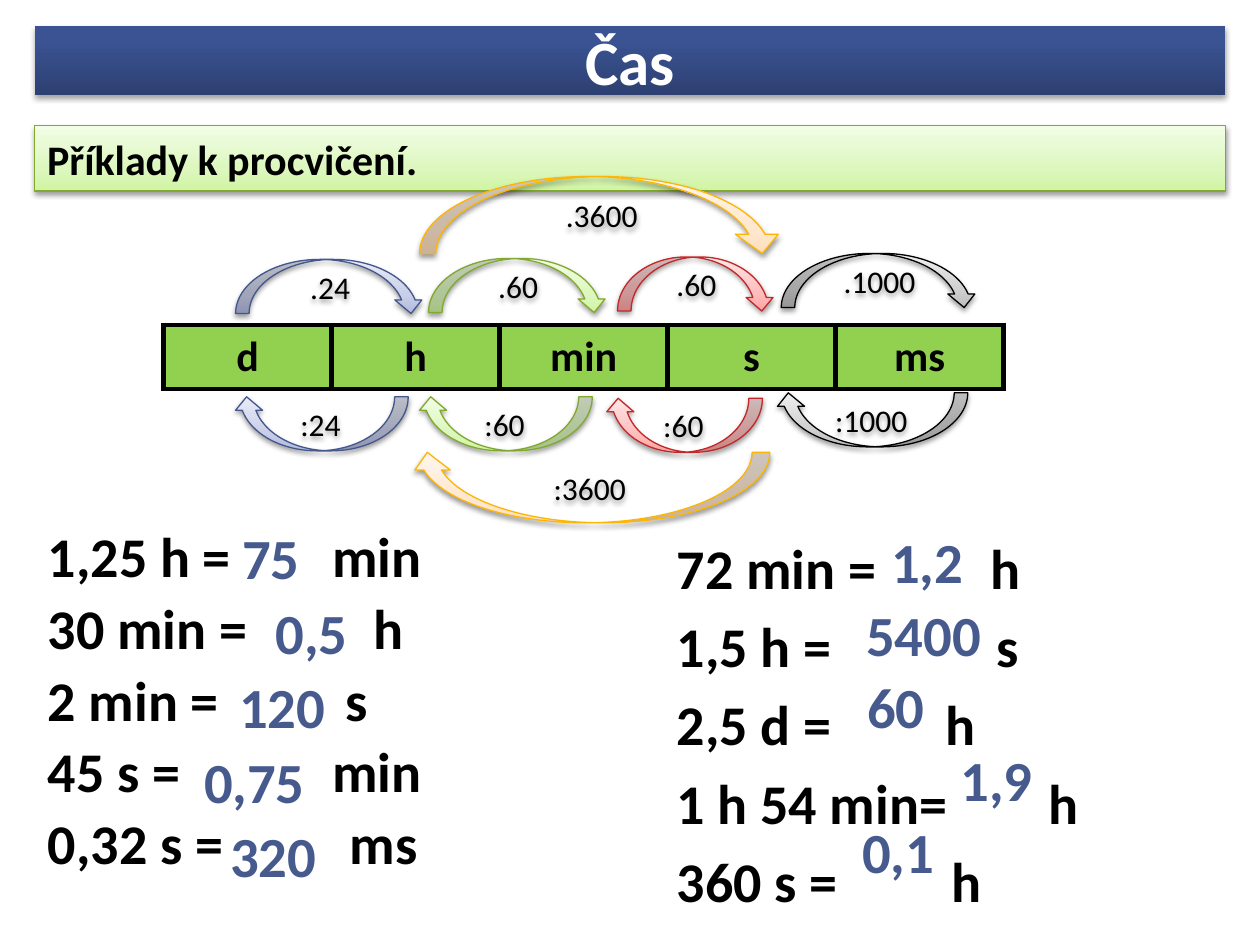
from copy import deepcopy
from lxml.etree import SubElement
from pptx import Presentation
from pptx.dml.color import RGBColor
from pptx.enum.shapes import MSO_SHAPE
from pptx.enum.text import MSO_ANCHOR, MSO_AUTO_SIZE, PP_ALIGN
from pptx.oxml.ns import qn
from pptx.util import Cm, Pt

FONT = "Calibri"
SPACE_WIDTH = 7.23
BLACK = RGBColor(0x00, 0x00, 0x00)
WHITE = RGBColor(0xFF, 0xFF, 0xFF)
ANSWER = RGBColor(0x47, 0x5A, 0x8D)
CELL = RGBColor(0x92, 0xD0, 0x50)
BLUE_LINE = RGBColor(0x44, 0x57, 0x8C)
GREEN_LINE = RGBColor(0x82, 0xA9, 0x2F)
RED_LINE = RGBColor(0xC2, 0x28, 0x29)
ORANGE_LINE = RGBColor(0xFE, 0xB6, 0x04)
NAVY = (RGBColor(0x2D, 0x40, 0x71), RGBColor(0x3B, 0x53, 0x93), RGBColor(0x39, 0x52, 0x95))
BLUE = (RGBColor(0xB2, 0xBB, 0xE0), RGBColor(0xC9, 0xCF, 0xE8), RGBColor(0xEA, 0xEC, 0xF7))
GREEN = (RGBColor(0xD0, 0xF5, 0xA3), RGBColor(0xDD, 0xF7, 0xBF), RGBColor(0xF2, 0xFD, 0xE6))
RED = (RGBColor(0xFF, 0xA3, 0xA3), RGBColor(0xFF, 0xBE, 0xBE), RGBColor(0xFF, 0xE6, 0xE6))
GRAY = (RGBColor(0xBD, 0xBD, 0xBD), RGBColor(0xD1, 0xD1, 0xD1), RGBColor(0xEE, 0xEE, 0xEE))
ORANGE = (RGBColor(0xFF, 0xDF, 0xBC), RGBColor(0xFF, 0xE8, 0xD0), RGBColor(0xFF, 0xF6, 0xED))

UNITS = ("d", "h", "min", "s", "ms")
LEFT_TASKS = (("1,25 h =", 8, "min"), ("30 min =", 10, "h"), ("2 min =", 10, "s"),
              ("45 s =", 12, "min"), ("0,32 s =", 10, "ms"))
RIGHT_TASKS = (("72 min =", 9, "h"), ("1,5 h =", 13, "s"), ("2,5 d =", 9, "h"),
               ("1 h 54 min=", 8, "h"), ("360 s =", 9, "h"))
LEFT_ANSWERS = (("75", 3.4), ("0,5", 4.22), ("120", 3.63), ("0,75", 3.07), ("320", 3.45))
RIGHT_ANSWERS = (("1,2", 16.63), ("5400", 16.56), ("60", 16), ("1,9", 18.03), ("0,1", 16.05))
MULTIPLY = (
    (".24", (4.75, 5.23, 3.81, 1.09), BLUE, BLUE_LINE),
    (".60", (8.64, 5.21, 3.61, 1.09), GREEN, GREEN_LINE),
    (".60", (12.45, 5.18, 3.18, 1.09), RED, RED_LINE),
    (".1000", (15.75, 5.11, 3.96, 1.09), GRAY, BLACK),
    (".3600", (8.46, 3.56, 7.34, 1.55), ORANGE, ORANGE_LINE),
)
DIVIDE = (
    (":24", (4.7, 8, 3.53, 1.09), BLUE, BLUE_LINE),
    (":60", (8.41, 8, 3.53, 1.09), GREEN, GREEN_LINE),
    (":60", (12.19, 8.03, 3.18, 1.09), RED, RED_LINE),
    (":1000", (15.62, 7.92, 3.89, 1.09), GRAY, BLACK),
    (":3600", (8.26, 9.12, 7.26, 1.42), ORANGE, ORANGE_LINE),
)


def write(paragraph, text, *, size, color=BLACK, bold=True, align=PP_ALIGN.LEFT,
          spacing=None, before=None, tracking=None):
    """Add formatted text to a paragraph."""
    paragraph.alignment = align
    if spacing:
        paragraph.line_spacing = spacing
    if before is not None:
        paragraph.space_before = before
    run = paragraph.add_run()
    run.text = text
    run.font.name = FONT
    run.font.size = Pt(size)
    run.font.bold = bold
    run.font.color.rgb = color
    if tracking:
        run._r.get_or_add_rPr().set("spc", str(round(tracking * 100)))


def place(shape, left, top, width, height):
    """Move and size a shape, in centimetres."""
    shape.left, shape.top = Cm(left), Cm(top)
    shape.width, shape.height = Cm(width), Cm(height)


def shade(shape, colors, middle=0.35, line=None, distance=1.6, opacity=38):
    """Give a shape an upward gradient, an outline and a soft shadow."""
    shape.fill.gradient()
    last_stop = shape._element.spPr.findall(".//" + qn("a:gs"))[-1]
    last_stop.addnext(deepcopy(last_stop))
    shape.fill.gradient_angle = 90
    for stop, color, position in zip(shape.fill.gradient_stops, colors, (0, middle, 1)):
        stop.color.rgb = color
        stop.position = position
    if line is None:
        shape.line.fill.background()
    else:
        shape.line.color.rgb = line
        shape.line.width = Pt(0.75)
    shape.shadow.inherit = False
    effects = shape._element.spPr.find(qn("a:effectLst"))
    shadow = SubElement(effects, qn("a:outerShdw"), blurRad=str(Pt(3.1)),
                        dist=str(Pt(distance)), dir="5400000", rotWithShape="0")
    tint = SubElement(shadow, qn("a:srgbClr"), val=str(BLACK))
    SubElement(tint, qn("a:alpha"), val=str(opacity * 1000))


def add_heading(slide):
    """Fill the title bar and the subtitle bar."""
    title = slide.shapes.title
    place(title, 0.7, 0.52, 24, 1.4)
    shade(title, NAVY, middle=0.8, distance=1.8, opacity=35)
    title.text_frame.auto_size = MSO_AUTO_SIZE.NONE
    title.text_frame.vertical_anchor = MSO_ANCHOR.MIDDLE
    write(title.text_frame.paragraphs[0], "Čas", size=36, color=WHITE, align=PP_ALIGN.CENTER)
    subtitle = slide.shapes.add_shape(MSO_SHAPE.RECTANGLE, Cm(0.7), Cm(2.53), Cm(24), Cm(1.32))
    shade(subtitle, GREEN, line=GREEN_LINE)
    subtitle.text_frame.vertical_anchor = MSO_ANCHOR.MIDDLE
    write(subtitle.text_frame.paragraphs[0], "Příklady k procvičení.", size=24)


def fill_tasks(body, tasks, left, top, spacing=None):
    """List the tasks, with a widened space where the answer goes."""
    place(body, left, top, 11.23, 7.87)
    frame = body.text_frame
    frame.auto_size = MSO_AUTO_SIZE.NONE
    frame.vertical_anchor = MSO_ANCHOR.TOP
    for row, (quantity, gap, unit) in enumerate(tasks):
        paragraph = frame.add_paragraph() if row else frame.paragraphs[0]
        write(paragraph, quantity, size=32, spacing=spacing)
        write(paragraph, " ", size=32, tracking=(gap - 1) * SPACE_WIDTH)
        write(paragraph, unit, size=32)
        SubElement(paragraph._p.get_or_add_pPr(), qn("a:buNone"))


def add_answers(slide, answers, top, step):
    """Set a column of answers over the gaps in the tasks."""
    for row, (answer, left) in enumerate(answers):
        box = slide.shapes.add_textbox(Cm(left), Cm(top + row * step), Cm(3.81), Cm(1.45))
        box.text_frame.word_wrap = True
        paragraph = box.text_frame.paragraphs[0]
        write(paragraph, answer, size=32.4, color=ANSWER, align=PP_ALIGN.CENTER,
              spacing=0.8, before=Pt(3))
        properties = paragraph._p.get_or_add_pPr()
        properties.set("marL", str(Cm(1.02)))
        properties.set("indent", str(Cm(-0.71)))


def add_arrow(slide, kind, label, position, colors, line, flipped=False):
    """Add a curved conversion arrow with its factor."""
    arrow = slide.shapes.add_shape(kind, *map(Cm, position))
    shade(arrow, colors, line=line)
    if flipped:
        arrow._element.spPr.find(qn("a:xfrm")).set("flipH", "1")
    arrow.text_frame.vertical_anchor = MSO_ANCHOR.MIDDLE
    write(arrow.text_frame.paragraphs[0], label, size=18, bold=False, align=PP_ALIGN.CENTER)
    return arrow


def add_units(slide):
    """Add the one-row table of time units."""
    table = slide.shapes.add_table(1, len(UNITS), Cm(3.3), Cm(6.55), Cm(16.93), Cm(1.29)).table
    for cell, unit in zip(table.rows[0].cells, UNITS):
        properties = cell._tc.get_or_add_tcPr()
        for side in ("a:lnL", "a:lnR", "a:lnT", "a:lnB"):
            border = SubElement(properties, qn(side), w=str(Pt(3)))
            SubElement(SubElement(border, qn("a:solidFill")), qn("a:srgbClr"), val=str(BLACK))
        cell.fill.solid()
        cell.fill.fore_color.rgb = CELL
        write(cell.text_frame.paragraphs[0], unit, size=24, align=PP_ALIGN.CENTER)


def main():
    """Build the slide on time units."""
    deck = Presentation()
    deck.slide_width, deck.slide_height = Cm(25.4), Cm(19.05)
    slide = deck.slides.add_slide(deck.slide_layouts[3])
    add_heading(slide)
    fill_tasks(slide.placeholders[2], RIGHT_TASKS, 13.39, 10.62)
    fill_tasks(slide.placeholders[1], LEFT_TASKS, 0.71, 10.54, spacing=0.9)
    add_answers(slide, RIGHT_ANSWERS, 10.77, 1.46)
    add_answers(slide, LEFT_ANSWERS, 10.69, 1.5)
    add_units(slide)
    for factor in DIVIDE:
        add_arrow(slide, MSO_SHAPE.CURVED_UP_ARROW, *factor, flipped=True)
    for factor in MULTIPLY:
        widest = add_arrow(slide, MSO_SHAPE.CURVED_DOWN_ARROW, *factor)
    widest.adjustments[0] = 0.21
    widest.adjustments[1] = 0.56
    deck.save("out.pptx")


if __name__ == "__main__":
    main()
